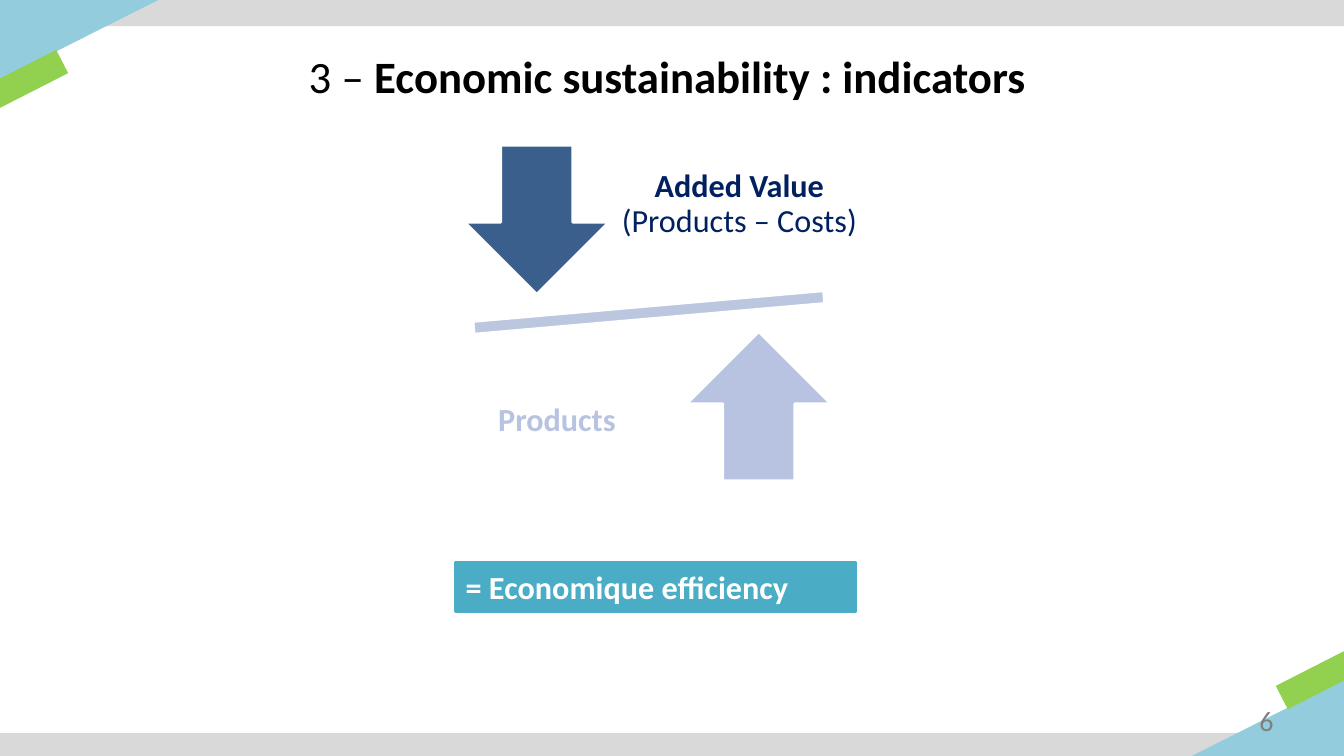
from dataclasses import dataclass

from pptx import Presentation
from pptx.dml.color import RGBColor
from pptx.enum.shapes import MSO_SHAPE
from pptx.enum.text import MSO_ANCHOR, MSO_AUTO_SIZE, PP_ALIGN
from pptx.util import Inches, Pt

RECT, TRI, MINUS = MSO_SHAPE.RECTANGLE, MSO_SHAPE.RIGHT_TRIANGLE, MSO_SHAPE.MATH_MINUS
DOWN, UP = MSO_SHAPE.DOWN_ARROW, MSO_SHAPE.UP_ARROW
TOP, MIDDLE = MSO_ANCHOR.TOP, MSO_ANCHOR.MIDDLE
LEFT, CENTER, RIGHT = PP_ALIGN.LEFT, PP_ALIGN.CENTER, PP_ALIGN.RIGHT
GROW, FIXED = MSO_AUTO_SIZE.SHAPE_TO_FIT_TEXT, MSO_AUTO_SIZE.NONE


@dataclass(frozen=True)
class Theme:
    """Colours, font and type sizes of the slide."""
    font: str = "Calibri"
    white: str = "FFFFFF"
    black: str = "000000"
    gray: str = "808080"
    band: str = "D9D9D9"
    sky: str = "93CDDD"
    green: str = "92D050"
    teal: str = "4BACC6"
    navy: str = "002060"
    steel: str = "3A5F8C"
    beam: str = "BBC7DE"
    pale: str = "B8C2E1"
    title: int = 32
    body: int = 23
    number: int = 20


THEME = Theme()
WIDE, HIGH = 13.33, 7.5


def color(code):
    """Turn a hex code into a colour."""
    return RGBColor.from_string(code)


def write(shape, runs, size, ink, align=LEFT, anchor=MIDDLE, inset=(0.1, 0.05),
          space=None, after=None, fit=FIXED):
    """Fill a shape with one paragraph of (text, bold) runs."""
    frame = shape.text_frame
    frame.word_wrap, frame.auto_size = True, fit
    frame.vertical_anchor = anchor
    frame.margin_left = frame.margin_right = Inches(inset[0])
    frame.margin_top = frame.margin_bottom = Inches(inset[1])
    para = frame.paragraphs[0]
    para.alignment, para.line_spacing = align, space
    if after is not None:
        para.space_after = Pt(after)
    for text, bold in runs:
        run = para.add_run()
        run.text = text
        run.font.name, run.font.size, run.font.bold = THEME.font, Pt(size), bold
        run.font.color.rgb = color(ink)


def draw(slide, kind, box, fill, line=None, turn=0):
    """Add a flat preset shape."""
    shape = slide.shapes.add_shape(kind, *map(Inches, box))
    shape.shadow.inherit = False
    shape.rotation = turn
    shape.fill.solid()
    shape.fill.fore_color.rgb = color(fill)
    if line:
        shape.line.color.rgb = color(line)
        shape.line.width = Pt(2)
    else:
        shape.line.fill.background()
    return shape


def label(slide, box, runs, size, ink, **style):
    """Add a text box."""
    write(slide.shapes.add_textbox(*map(Inches, box)), runs, size, ink, **style)


def edge(slide, box, flip=False):
    """Draw a band with its corner wedge, turned half round if flipped."""
    left, top, wide, high = box
    half = 180 if flip else 0
    parts = ((RECT, 0, 0, wide, 0.26, THEME.band, 0),
             (TRI, 0.39, -0.39, 0.79, 1.57, THEME.sky, 90),
             (RECT, -0.13, 0.66, 0.79, 0.26, THEME.green, 333))
    for kind, x, y, w, h, fill, turn in parts:
        if flip:
            x, y = wide - x - w, high - y - h
        draw(slide, kind, (left + x, top + y, w, h), fill, turn=(turn + half) % 360)


def head(slide, box):
    """Place and format the title."""
    title = slide.shapes.title
    title.left, title.top, title.width, title.height = map(Inches, box)
    write(title, (("3 – ", False), ("Economic sustainability : indicators", True)),
          THEME.title, THEME.black, align=CENTER)


def scale(slide, box):
    """Draw the tilted beam with its two arrows and labels."""
    left, top, wide, high = box
    arm, rise = 1.43, 1.48
    draw(slide, MINUS, (left, top + 1.58, wide, 0.54), THEME.beam, THEME.white, 355)
    draw(slide, DOWN, (left + 0.55, top + 0.19, arm, rise), THEME.steel, THEME.white)
    draw(slide, UP, (left + wide - 0.57 - arm, top + high - 0.19 - rise, arm, rise),
         THEME.pale, THEME.white)
    style = dict(align=CENTER, inset=(0.18, 0.18), space=0.9, after=8)
    label(slide, (left + 1.77, top, 3.01, 1.56),
          (("Added Value ", True), ("(Products – Costs)", False)),
          THEME.body, THEME.navy, **style)
    label(slide, (left + 0.7, top + high - 1.56, 1.53, 1.56),
          (("Products", True),), THEME.body, THEME.pale, **style)


def result(slide, box):
    """Draw the result bar."""
    bar = draw(slide, RECT, box, THEME.teal, THEME.teal)
    write(bar, (("= Economique efficiency", True),), THEME.body, THEME.white,
          anchor=TOP, fit=GROW)


def main():
    """Build the slide and save it."""
    deck = Presentation()
    deck.slide_width, deck.slide_height = Inches(WIDE), Inches(HIGH)
    slide = deck.slides.add_slide(deck.slide_layouts[5])
    edge(slide, (0, 0, WIDE, HIGH))
    edge(slide, (0, 0.03, WIDE, HIGH), flip=True)
    label(slide, (11.91, 6.95, 0.82, 0.4), (("6", False),), THEME.number, THEME.gray,
          align=RIGHT)
    head(slide, (0.51, 0.4, 12.22, 0.69))
    result(slide, (4.52, 5.58, 3.97, 0.49))
    scale(slide, (4.06, 1.25, 4.75, 3.71))
    deck.save("out.pptx")


if __name__ == "__main__":
    main()
